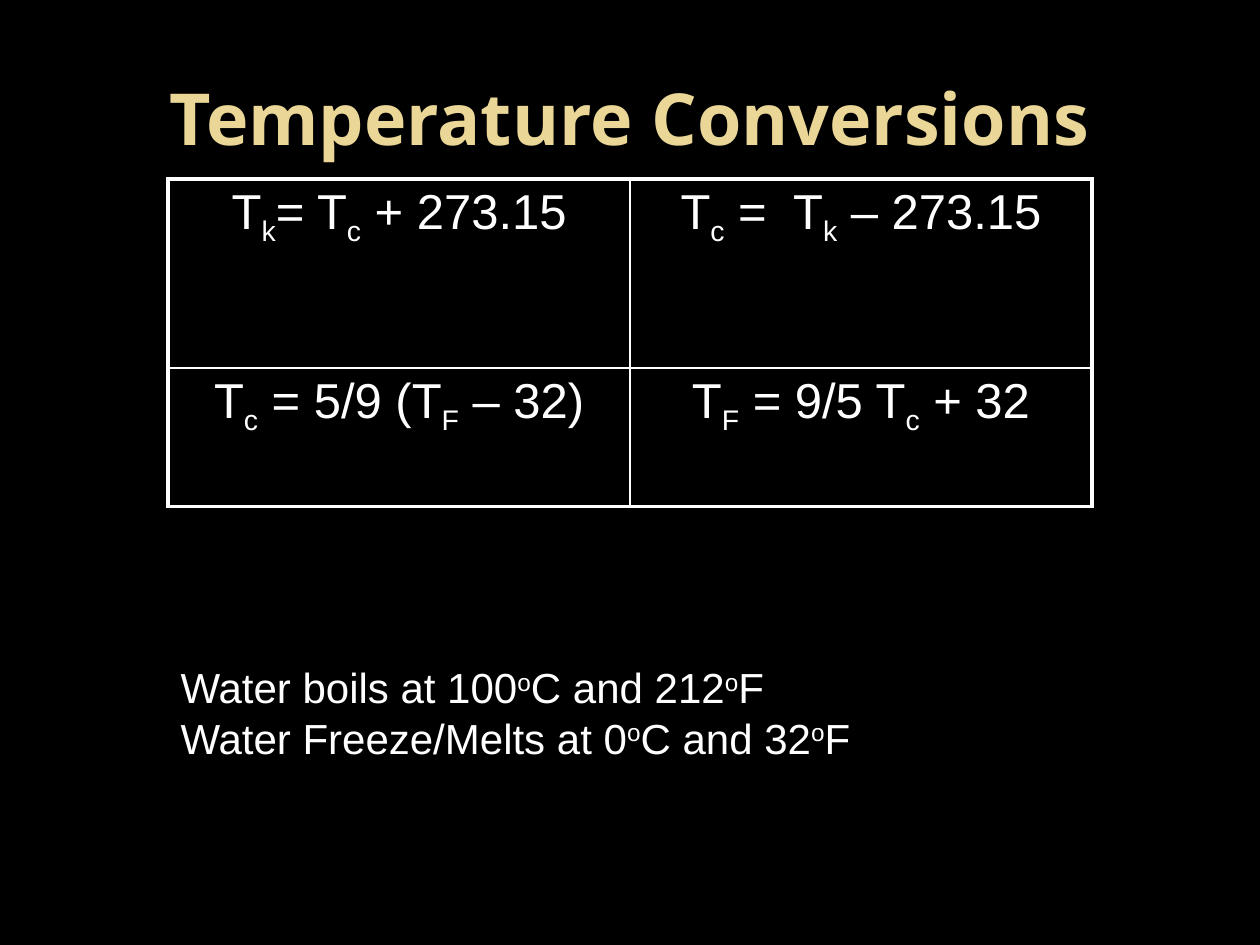
from lxml.etree import SubElement
from pptx import Presentation
from pptx.dml.color import RGBColor as RGB
from pptx.enum.text import MSO_ANCHOR as Anchor, PP_ALIGN as Align
from pptx.oxml.ns import qn
from pptx.util import Cm, Pt

TITLE = "Temperature Conversions"
# Segments alternate between normal text and shifted text.
FORMULAS = [
    [("T", "k", "= T", "c", " + 273.15"), ("T", "c", " =  T", "k", " – 273.15")],
    [("T", "c", " = 5/9 (T", "F", " – 32)"), ("T", "F", " = 9/5 T", "c", " + 32")],
]
FACTS = [
    ("Water boils at 100", "o", "C and 212", "o", "F"),
    ("Water Freeze/Melts at 0", "o", "C and 32", "o", "F"),
]

THEME = {
    "background": RGB.from_string("000000"),
    "line": "FFFFFF",
    "outer": Pt(2.25),
    "inner": Pt(1),
    "title": {"name": "Open Sans", "size": Pt(41), "bold": True, "color": "EAD696"},
    "formula": {"name": "Arial", "size": Pt(28), "color": "FFFFFF"},
    "fact": {"name": "Arial", "size": Pt(24), "color": "FFFFFF"},
}
SUBSCRIPT, SUPERSCRIPT = "-25000", "30000"
LEFT = Cm(3.39)
COLUMN_WIDTH = Cm(9.31)
ROW_HEIGHTS = [Cm(3.81), Cm(2.79)]


def set_values(target, values):
    for name, value in values.items():
        setattr(target, name, value)


def add_run(paragraph, text, style):
    run = paragraph.add_run()
    run.text = text
    set_values(run.font, {k: v for k, v in style.items() if k != "color"})
    run.font.color.rgb = RGB.from_string(style["color"])
    return run


def add_segments(paragraph, segments, style, baseline):
    for index, text in enumerate(segments):
        run = add_run(paragraph, text, style)
        if index % 2:
            run._r.get_or_add_rPr().set("baseline", baseline)


def set_borders(cell, outer_sides):
    properties = cell._tc.get_or_add_tcPr()
    for side in "LRTB":
        width = THEME["outer" if side in outer_sides else "inner"]
        line = SubElement(properties, qn(f"a:ln{side}"), w=str(width))
        fill = SubElement(line, qn("a:solidFill"))
        SubElement(fill, qn("a:srgbClr"), val=THEME["line"])


def add_title(slide):
    title = slide.shapes.title
    set_values(title, {"left": Cm(1.27), "top": Cm(0.76),
                       "width": Cm(22.86), "height": Cm(3.18)})
    title.text_frame.vertical_anchor = Anchor.MIDDLE
    paragraph = title.text_frame.paragraphs[0]
    paragraph.alignment = Align.CENTER
    add_run(paragraph, TITLE, THEME["title"])


def add_formulas(slide):
    rows, columns = len(FORMULAS), len(FORMULAS[0])
    table = slide.shapes.add_table(rows, columns, LEFT, Cm(3.61),
                                   COLUMN_WIDTH * columns, sum(ROW_HEIGHTS)).table
    set_values(table, {"first_row": False, "horz_banding": False})
    for row, height in zip(table.rows, ROW_HEIGHTS):
        row.height = height
    for r, formulas in enumerate(FORMULAS):
        for c, segments in enumerate(formulas):
            cell = table.cell(r, c)
            edges = {"L": c == 0, "R": c == columns - 1, "T": r == 0, "B": r == rows - 1}
            set_borders(cell, [side for side, outer in edges.items() if outer])
            cell.fill.background()
            paragraph = cell.text_frame.paragraphs[0]
            paragraph.alignment = Align.CENTER
            add_segments(paragraph, segments, THEME["formula"], SUBSCRIPT)


def add_facts(slide):
    frame = slide.shapes.add_textbox(LEFT, Cm(12.27), Cm(14.12), Cm(3.23)).text_frame
    set_values(frame, {"word_wrap": False, "vertical_anchor": Anchor.BOTTOM})
    for index, segments in enumerate(FACTS):
        paragraph = frame.add_paragraph() if index else frame.paragraphs[0]
        paragraph.alignment = Align.LEFT
        add_segments(paragraph, segments, THEME["fact"], SUPERSCRIPT)


def main():
    presentation = Presentation()
    set_values(presentation, {"slide_width": Cm(25.4), "slide_height": Cm(19.05)})
    slide = presentation.slides.add_slide(presentation.slide_layouts.get_by_name("Title Only"))
    slide.background.fill.solid()
    slide.background.fill.fore_color.rgb = THEME["background"]
    add_title(slide)
    add_facts(slide)
    add_formulas(slide)
    presentation.save("out.pptx")


if __name__ == "__main__":
    main()
